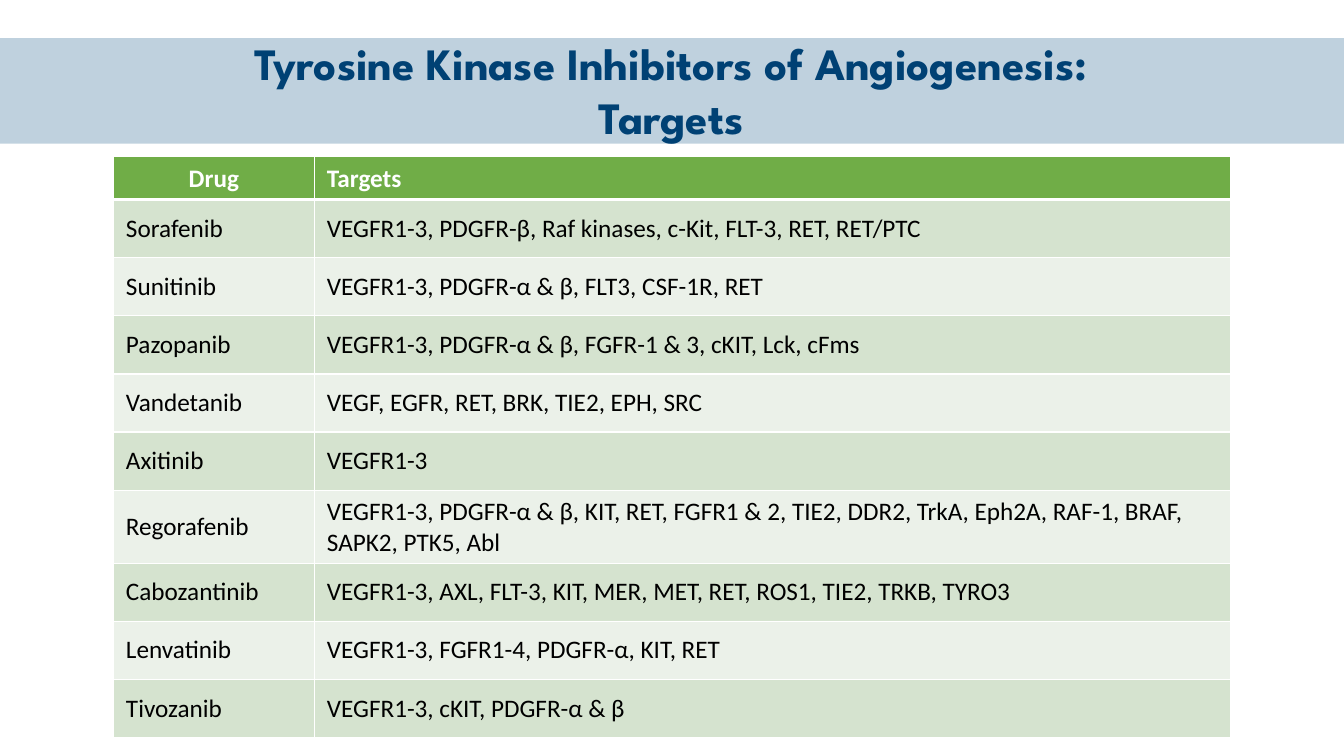
"""Build a slide with a table of kinase inhibitors and their targets."""
from lxml import etree
from pptx import Presentation
from pptx.dml.color import RGBColor
from pptx.enum.shapes import MSO_SHAPE
from pptx.enum.text import MSO_ANCHOR, PP_ALIGN
from pptx.oxml.ns import qn
from pptx.util import Pt

RECTANGLE = MSO_SHAPE.RECTANGLE
MIDDLE = MSO_ANCHOR.MIDDLE
CENTER, LEFT = PP_ALIGN.CENTER, PP_ALIGN.LEFT

TITLE = "Tyrosine Kinase Inhibitors of Angiogenesis:\nTargets"
ROWS = [
    ("Drug", "Targets"),
    ("Sorafenib", "VEGFR1-3, PDGFR-β, Raf kinases, c-Kit, FLT-3, RET, RET/PTC"),
    ("Sunitinib", "VEGFR1-3, PDGFR-α & β, FLT3, CSF-1R, RET"),
    ("Pazopanib", "VEGFR1-3, PDGFR-α & β, FGFR-1 & 3, cKIT, Lck, cFms"),
    ("Vandetanib", "VEGF, EGFR, RET, BRK, TIE2, EPH, SRC"),
    ("Axitinib", "VEGFR1-3"),
    ("Regorafenib", "VEGFR1-3, PDGFR-α & β, KIT, RET, FGFR1 & 2, TIE2, DDR2, "
                    "TrkA, Eph2A, RAF-1, BRAF, SAPK2, PTK5, Abl"),
    ("Cabozantinib", "VEGFR1-3, AXL, FLT-3, KIT, MER, MET, RET, ROS1, TIE2, TRKB, TYRO3"),
    ("Lenvatinib", "VEGFR1-3, FGFR1-4, PDGFR-α, KIT, RET"),
    ("Tivozanib", "VEGFR1-3, cKIT, PDGFR-α & β"),
]
SLIDE_SIZE = (960, 540)
BAND_BOX = (0, 27.2, 960, 75.4)
TITLE_BOX = (85.7, 22.3, 787.7, 85)
TABLE_LEFT, TABLE_TOP = 81, 112
COLUMN_WIDTHS = (143.5, 654.5)
HEADER_HEIGHT, ROW_HEIGHT, TALL_HEIGHT = 29.5, 41.5, 49
TALL_ROW = 6
INSET_X, INSET_Y = 9, 4.5
HEADER_FILL, ROW_FILLS = "70AD47", ("EBF1E9", "D5E3CF")
WHITE, BLACK, NAVY, BAND = "FFFFFF", "000000", "004174", "00497F"


def color(hex_value):
    return RGBColor.from_string(hex_value)


def box(values):
    return [Pt(value) for value in values]


def format_text(text_frame, font_name, size, hex_value, bold, alignment):
    for paragraph in text_frame.paragraphs:
        paragraph.alignment = alignment
        for run in paragraph.runs:
            run.font.name = font_name
            run.font.size = Pt(size)
            run.font.bold = bold
            run.font.color.rgb = color(hex_value)


def add_borders(cell, bottom_width):
    properties = cell._tc.get_or_add_tcPr()
    for side, width in (("L", 1), ("R", 1), ("T", 1), ("B", bottom_width)):
        line = etree.SubElement(properties, qn(f"a:ln{side}"), w=str(Pt(width)))
        fill = etree.SubElement(line, qn("a:solidFill"))
        etree.SubElement(fill, qn("a:srgbClr"), val=WHITE)


def add_band(slide):
    band = slide.shapes.add_shape(RECTANGLE, *box(BAND_BOX))
    band.shadow.inherit = False
    band.line.fill.background()
    band.fill.solid()
    band.fill.fore_color.rgb = color(BAND)
    fill_color = band._element.spPr.find(f"{qn('a:solidFill')}/{qn('a:srgbClr')}")
    etree.SubElement(fill_color, qn("a:alpha"), val="25000")


def add_title(slide):
    text_frame = slide.shapes.add_textbox(*box(TITLE_BOX)).text_frame
    text_frame.word_wrap = True
    text_frame.text = TITLE
    format_text(text_frame, "League Spartan", 32, NAVY, True, CENTER)


def add_targets_table(slide):
    heights = [HEADER_HEIGHT] + [ROW_HEIGHT] * (len(ROWS) - 1)
    heights[TALL_ROW] = TALL_HEIGHT
    table_box = (TABLE_LEFT, TABLE_TOP, sum(COLUMN_WIDTHS), sum(heights))
    table = slide.shapes.add_table(len(ROWS), len(COLUMN_WIDTHS), *box(table_box)).table
    for column, width in zip(table.columns, COLUMN_WIDTHS):
        column.width = Pt(width)
    for row_index, texts in enumerate(ROWS):
        table.rows[row_index].height = Pt(heights[row_index])
        header = row_index == 0
        for column_index, text in enumerate(texts):
            cell = table.cell(row_index, column_index)
            cell.text = text
            cell.vertical_anchor = MIDDLE
            cell.margin_left = cell.margin_right = Pt(INSET_X)
            cell.margin_top = cell.margin_bottom = Pt(INSET_Y)
            add_borders(cell, 3 if header else 1)
            cell.fill.solid()
            cell.fill.fore_color.rgb = color(HEADER_FILL if header else ROW_FILLS[row_index % 2])
            format_text(cell.text_frame, "Calibri", 18, WHITE if header else BLACK, header,
                        CENTER if header and column_index == 0 else LEFT)


def main():
    presentation = Presentation()
    presentation.slide_width, presentation.slide_height = box(SLIDE_SIZE)
    slide = presentation.slides.add_slide(presentation.slide_layouts[6])
    add_band(slide)
    add_title(slide)
    add_targets_table(slide)
    presentation.save("out.pptx")


if __name__ == "__main__":
    main()
